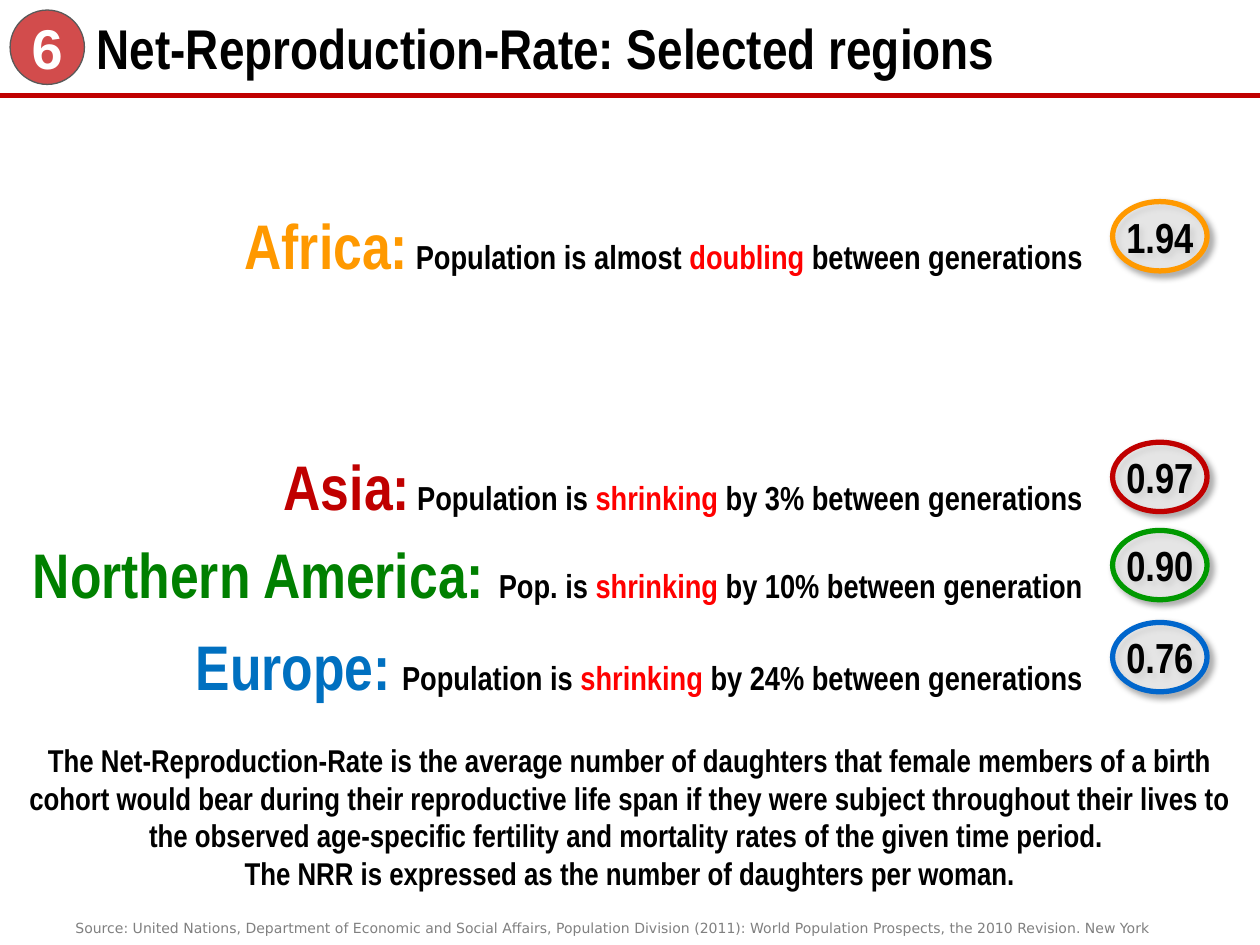
from dataclasses import dataclass

from lxml.etree import SubElement
from pptx import Presentation
from pptx.dml.color import RGBColor
from pptx.enum.shapes import MSO_CONNECTOR as Connector, MSO_SHAPE as Preset
from pptx.enum.text import MSO_ANCHOR as Anchor, PP_ALIGN as Align
from pptx.oxml.ns import qn
from pptx.util import Inches, Pt

COLORS = {
    "black": "000000",
    "white": "FFFFFF",
    "gray": "808080",
    "outline": "595959",
    "crimson": "C00000",
    "highlight": "FF0000",
    "orange": "FF9900",
    "green": "008000",
    "bright_green": "009900",
    "blue": "0070C0",
    "deep_blue": "0066CC",
}
NARROW = "Arial Narrow"
STATEMENT_RIGHT = 8.69
RATE_LEFT = 8.83


@dataclass
class Region:
    name: str
    gap_size: int
    before: str
    trend: str
    after: str
    rate: str
    top: float
    width: float
    name_color: str
    ring_color: str


@dataclass
class Style:
    size: float
    color: str = "black"
    font: str = NARROW
    bold: bool = True


REGIONS = [
    Region("Africa:", 19, "Population is almost ", "doubling", " between generations",
           "1.94", 1.59, 6.92, "orange", "orange"),
    Region("Asia:", 18, "Population is ", "shrinking", " by 3% between generations",
           "0.97", 3.5, 6.61, "crimson", "crimson"),
    Region("Northern America:", 36, "Pop. is ", "shrinking", " by 10% between generation",
           "0.90", 4.2, 8.87, "green", "bright_green"),
    Region("Europe:", 28, "Population is ", "shrinking", " by 24% between generations",
           "0.76", 4.93, 7.31, "blue", "deep_blue"),
]


def rgb(name: str) -> RGBColor:
    return RGBColor.from_string(COLORS[name])


def format_run(run, style: Style) -> None:
    run.font.name = style.font
    run.font.size = Pt(style.size)
    run.font.bold = style.bold
    run.font.color.rgb = rgb(style.color)


def fill_text(shape, text: str, style: Style, align=Align.LEFT,
              anchor=Anchor.TOP, wrap: bool = True) -> None:
    text_frame = shape.text_frame
    text_frame.word_wrap = wrap
    text_frame.vertical_anchor = anchor
    paragraph = text_frame.paragraphs[0]
    paragraph.text = text
    paragraph.alignment = align
    for run in paragraph.runs:
        format_run(run, style)


def add_text(slide, left: float, top: float, width: float, height: float):
    return slide.shapes.add_textbox(Inches(left), Inches(top), Inches(width), Inches(height))


def add_badge(slide, left: float, top: float, width: float, height: float, text: str,
              style: Style, fill: str, opacity: int, line: str, line_width: float):
    badge = slide.shapes.add_shape(Preset.OVAL, Inches(left), Inches(top),
                                   Inches(width), Inches(height))
    badge.shadow.inherit = False
    badge.fill.solid()
    badge.fill.fore_color.rgb = rgb(fill)
    fill_color = badge.fill._xPr.find(qn("a:solidFill"))[0]
    SubElement(fill_color, qn("a:alpha"), val=str(opacity * 1000))
    badge.line.color.rgb = rgb(line)
    badge.line.width = Pt(line_width)
    fill_text(badge, text, style, Align.CENTER, Anchor.MIDDLE, wrap=False)
    return badge


def add_shadow(shape) -> None:
    effects = shape._element.spPr.find(qn("a:effectLst"))
    shadow = SubElement(effects, qn("a:outerShdw"), blurRad=str(Pt(4)), dist=str(Pt(3)),
                        dir=str(45 * 60000), algn="tl", rotWithShape="0")
    color = SubElement(shadow, qn("a:srgbClr"), val=COLORS["black"])
    SubElement(color, qn("a:alpha"), val="40000")


def add_region(slide, region: Region) -> None:
    statement = add_text(slide, STATEMENT_RIGHT - region.width, region.top, region.width, 0.71)
    statement.text_frame.word_wrap = False
    paragraph = statement.text_frame.paragraphs[0]
    paragraph.alignment = Align.RIGHT
    parts = [
        (region.name, Style(36, region.name_color)),
        (" ", Style(region.gap_size)),
        (region.before, Style(19)),
        (region.trend, Style(19, "highlight")),
        (region.after, Style(19)),
    ]
    for text, style in parts:
        run = paragraph.add_run()
        run.text = text
        format_run(run, style)
    rate = add_badge(slide, RATE_LEFT, region.top + 0.01, 0.75, 0.55, region.rate,
                     Style(24), "white", 55, region.ring_color, 3)
    add_shadow(rate)


def main() -> None:
    presentation = Presentation()
    presentation.slide_width = Inches(10)
    presentation.slide_height = Inches(7.5)
    slide = presentation.slides.add_slide(presentation.slide_layouts[6])

    rule = slide.shapes.add_connector(Connector.STRAIGHT, Inches(0), Inches(0.76),
                                      Inches(10), Inches(0.76))
    rule.line.color.rgb = rgb("crimson")
    rule.line.width = Pt(3)
    SubElement(rule._element.spPr, qn("a:effectLst"))

    title = add_text(slide, 0.67, 0, 8.74, 0.75)
    fill_text(title, "Net-Reproduction-Rate: Selected regions", Style(32), anchor=Anchor.MIDDLE)
    add_badge(slide, 0.08, 0.08, 0.59, 0.59, "6", Style(32, "white", "Arial"),
              "crimson", 70, "outline", 0.75)

    for region in REGIONS:
        add_region(slide, region)

    definition = add_text(slide, 0, 5.83, 10, 1.31)
    fill_text(
        definition,
        "The Net-Reproduction-Rate is the average number of daughters that female members "
        "of a birth cohort would bear during their reproductive life span if they were "
        "subject throughout their lives to the observed age-specific fertility and "
        "mortality rates of the given time period. \n"
        "The NRR is expressed as the number of daughters per woman.",
        Style(18), Align.CENTER)

    source = add_text(slide, 0.5, 7.25, 9.33, 0.25)
    fill_text(
        source,
        "Source: United Nations, Department of Economic and Social Affairs, Population "
        "Division (2011): World Population Prospects, the 2010 Revision. New York",
        Style(8, "gray", "DejaVu Sans", False))

    presentation.save("out.pptx")


if __name__ == "__main__":
    main()
